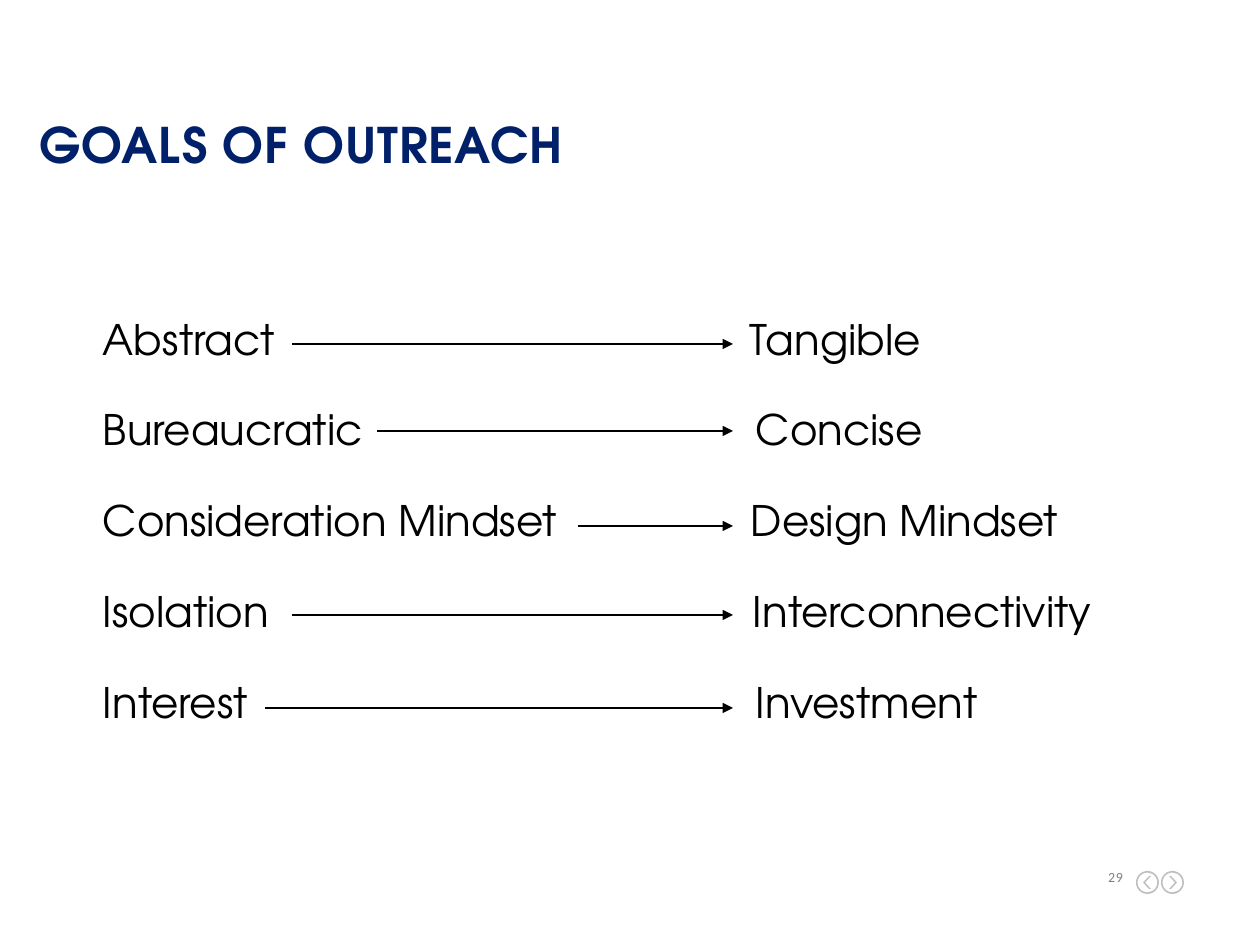
"""Builds the slide on the goals of outreach."""
from lxml.etree import SubElement
from pptx import Presentation
from pptx.dml.color import RGBColor
from pptx.enum.shapes import MSO_CONNECTOR, MSO_SHAPE
from pptx.enum.text import MSO_ANCHOR, MSO_AUTO_SIZE, PP_ALIGN
from pptx.oxml.ns import qn
from pptx.util import Emu, Pt

TITLE = "GOALS OF OUTREACH"
PAGE_NUMBER = "29"
GOALS = [
    {"before": "Abstract", "after": "Tangible", "after_x": 750, "arrow": (292, 344)},
    {"before": "Bureaucratic", "after": "Concise", "after_x": 756, "arrow": (377, 431)},
    {"before": "Consideration Mindset", "after": "Design Mindset", "after_x": 751, "arrow": (578, 526)},
    {"before": "Isolation", "after": "Interconnectivity", "after_x": 753, "arrow": (292, 615)},
    {"before": "Interest", "after": "Investment", "after_x": 756, "arrow": (265, 708)},
]
BUTTONS = [{"left": 1136, "chevron": 1143, "rotation": 180},
           {"left": 1161, "chevron": 1169, "rotation": 0}]

FONT = "TeX Gyre Adventor"
NAVY, BLACK, GRAY, SILVER = "002069", "000000", "808080", "BFBFBF"
MARGIN, INDENT, ARROW_END = 40, 63, 733


def px(value):
    return Emu(round(value * 914400 / 126))


def color(value):
    return RGBColor.from_string(value)


def place(shape, left, top, width, height):
    shape.left, shape.top, shape.width, shape.height = map(px, (left, top, width, height))


def prepare_frame(shape, inset=0):
    frame = shape.text_frame
    frame.word_wrap = True
    frame.auto_size = MSO_AUTO_SIZE.NONE
    frame.vertical_anchor = MSO_ANCHOR.TOP
    frame.margin_left = px(inset)
    frame.margin_top = frame.margin_right = frame.margin_bottom = 0
    return frame


def write(paragraph, text, size, fill, font=FONT, bold=False, spacing=0,
          align=PP_ALIGN.LEFT, line_spacing=1.0, before=0, tab=None):
    if tab:
        tabs = SubElement(paragraph._p.get_or_add_pPr(), qn("a:tabLst"))
        SubElement(tabs, qn("a:tab"), pos=str(px(tab)), algn="l")
    paragraph.alignment = align
    paragraph.line_spacing = line_spacing
    paragraph.space_before = Pt(before)
    run = paragraph.add_run()
    run.text = text
    run.font.name, run.font.size, run.font.bold = font, Pt(size), bold
    run.font.color.rgb = color(fill)
    if spacing:
        run._r.get_or_add_rPr().set("spc", str(round(spacing * 100)))


def add_text_box(slide, *box, inset=0):
    shape = slide.shapes.add_textbox(*map(px, box))
    return prepare_frame(shape, inset)


def add_arrow(slide, start, y):
    arrow = slide.shapes.add_connector(
        MSO_CONNECTOR.STRAIGHT, px(start), px(y), px(ARROW_END), px(y))
    arrow.line.width = Pt(1.5)
    arrow.line.color.rgb = color(BLACK)
    SubElement(arrow.line._get_or_add_ln(), qn("a:tailEnd"), type="triangle")
    SubElement(arrow._element.spPr, qn("a:effectLst"))


def add_icon(slide, kind, adjustment, *box, rotation=0):
    shape = slide.shapes.add_shape(kind, *map(px, box))
    shape.adjustments[0] = adjustment
    shape.rotation = rotation
    shape.shadow.inherit = False
    shape.fill.solid()
    shape.fill.fore_color.rgb = color(SILVER)
    shape.line.fill.background()


def main():
    presentation = Presentation()
    presentation.slide_width, presentation.slide_height = px(1260), px(945)
    slide = presentation.slides.add_slide(presentation.slide_layouts[5])

    title = slide.shapes.title
    place(title, MARGIN, 115, 1096, 71)
    write(prepare_frame(title).paragraphs[0], TITLE, 28, NAVY, bold=True, spacing=0.5)

    goals = add_text_box(slide, MARGIN, 319, 1187, 378, inset=INDENT)
    for index, goal in enumerate(GOALS):
        paragraph = goals.add_paragraph() if index else goals.paragraphs[0]
        write(paragraph, f"{goal['before']}\t{goal['after']}", 24, BLACK,
              line_spacing=0.9, before=25.9 if index else 0,
              tab=goal["after_x"] - MARGIN - INDENT)
        add_arrow(slide, *goal["arrow"])

    number = add_text_box(slide, 1094, 868, 29, 16)
    write(number.paragraphs[0], PAGE_NUMBER, 8, GRAY, font="Calibri",
          spacing=0.3, align=PP_ALIGN.RIGHT)
    for button in BUTTONS:
        add_icon(slide, MSO_SHAPE.DONUT, 0.07, button["left"], 871, 23, 23)
        add_icon(slide, MSO_SHAPE.CHEVRON, 0.75, button["chevron"], 876, 8, 13,
                 rotation=button["rotation"])
    presentation.save("out.pptx")


if __name__ == "__main__":
    main()
